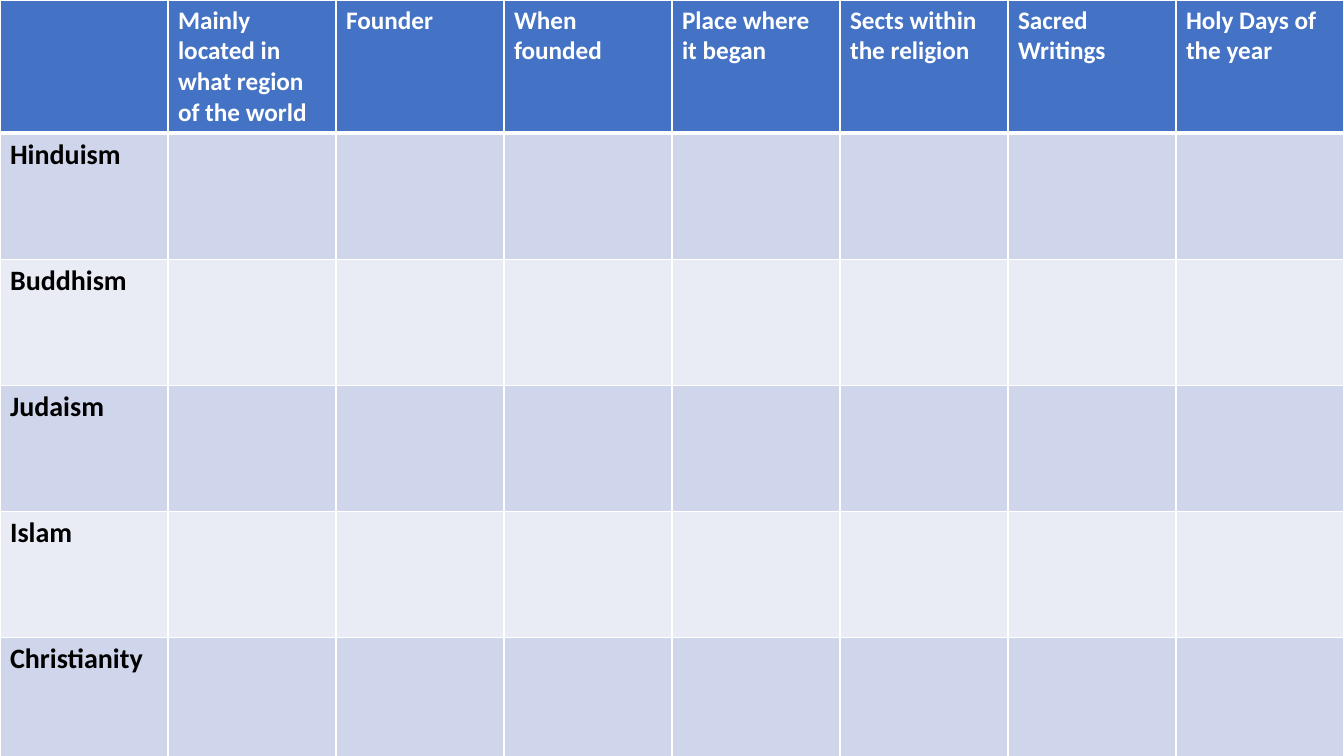
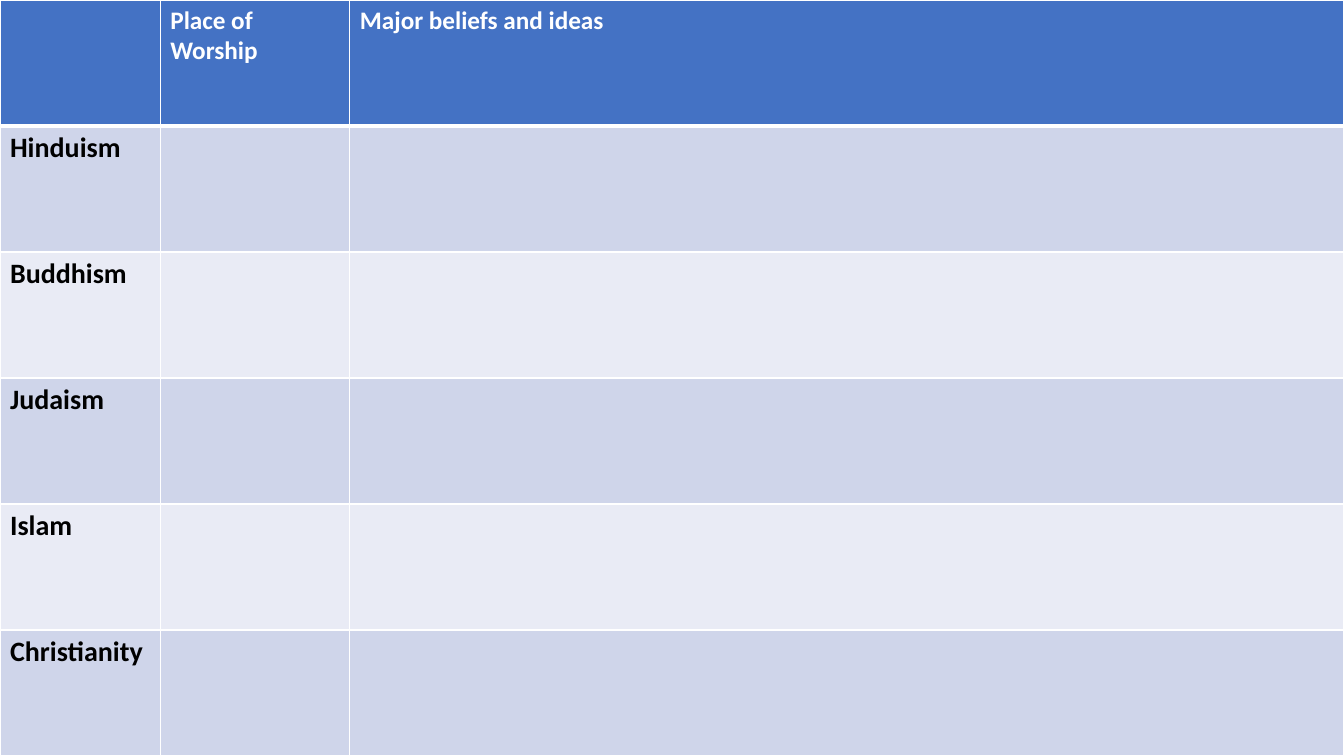
from dataclasses import dataclass

from pptx import Presentation
from pptx import util as u
from pptx.dml.color import RGBColor
from pptx.oxml.ns import qn
from lxml import etree

COLORS = {
    "header": "4472C4",
    "odd_band": "CFD5EA",
    "even_band": "E9EBF5",
    "border": "FFFFFF",
    "header_text": "FFFFFF",
    "label_text": "000000",
}
FONT = "Calibri"
HEADER_SIZE, LABEL_SIZE = 18, 20
THIN_RULE, HEADER_RULE = 1, 3
SLIDE_WIDTH, SLIDE_HEIGHT = u.Inches(13.33), u.Inches(7.5)
BLANK_LAYOUT = 6
RELIGIONS = ("Hinduism", "Buddhism", "Judaism", "Islam", "Christianity")


@dataclass(frozen=True)
class Column:
    heading: str
    weight: float = 1


@dataclass(frozen=True)
class Worksheet:
    columns: tuple[Column, ...]


WORKSHEETS = (
    Worksheet((
        Column(""),
        Column("Mainly located in what region of the world"),
        Column("Founder"),
        Column("When founded"),
        Column("Place where it began"),
        Column("Sects within the religion"),
        Column("Sacred Writings"),
        Column("Holy Days of the year"),
    )),
    Worksheet((
        Column("", 1.59),
        Column("Place of Worship", 1.88),
        Column("Major beliefs and ideas", 9.86),
    )),
)


def add_border(cell, side: str, points: float) -> None:
    properties = cell._tc.get_or_add_tcPr()
    line = etree.SubElement(properties, qn(f"a:ln{side}"), w=str(u.Pt(points)))
    fill = etree.SubElement(line, qn("a:solidFill"))
    etree.SubElement(fill, qn("a:srgbClr"), val=COLORS["border"])


def style_cell(cell, row_index: int) -> None:
    is_header = row_index == 0
    add_border(cell, "L", THIN_RULE)
    add_border(cell, "R", THIN_RULE)
    add_border(cell, "T", HEADER_RULE if row_index == 1 else THIN_RULE)
    add_border(cell, "B", HEADER_RULE if is_header else THIN_RULE)
    band = "odd_band" if row_index % 2 else "even_band"
    cell.fill.solid()
    cell.fill.fore_color.rgb = RGBColor.from_string(
        COLORS["header" if is_header else band])


def write_cell(cell, words: str, is_header: bool) -> None:
    cell.text = words
    font = cell.text_frame.paragraphs[0].font
    font.name = FONT
    font.bold = True
    font.size = u.Pt(HEADER_SIZE if is_header else LABEL_SIZE)
    font.color.rgb = RGBColor.from_string(
        COLORS["header_text" if is_header else "label_text"])


def add_worksheet(presentation, worksheet: Worksheet) -> None:
    slide = presentation.slides.add_slide(presentation.slide_layouts[BLANK_LAYOUT])
    columns = worksheet.columns
    table = slide.shapes.add_table(
        len(RELIGIONS) + 1, len(columns), 0, 0, SLIDE_WIDTH, SLIDE_HEIGHT).table
    total_weight = sum(column.weight for column in columns)
    for table_column, column in zip(table.columns, columns):
        table_column.width = round(SLIDE_WIDTH * column.weight / total_weight)
    for row_index, row in enumerate(table.rows):
        for cell in row.cells:
            style_cell(cell, row_index)
    for column_index, column in enumerate(columns):
        if column.heading:
            write_cell(table.cell(0, column_index), column.heading, True)
    for row_index, religion in enumerate(RELIGIONS, start=1):
        write_cell(table.cell(row_index, 0), religion, False)


def main() -> None:
    presentation = Presentation()
    presentation.slide_width = SLIDE_WIDTH
    presentation.slide_height = SLIDE_HEIGHT
    for worksheet in WORKSHEETS:
        add_worksheet(presentation, worksheet)
    presentation.save("out.pptx")


if __name__ == "__main__":
    main()
